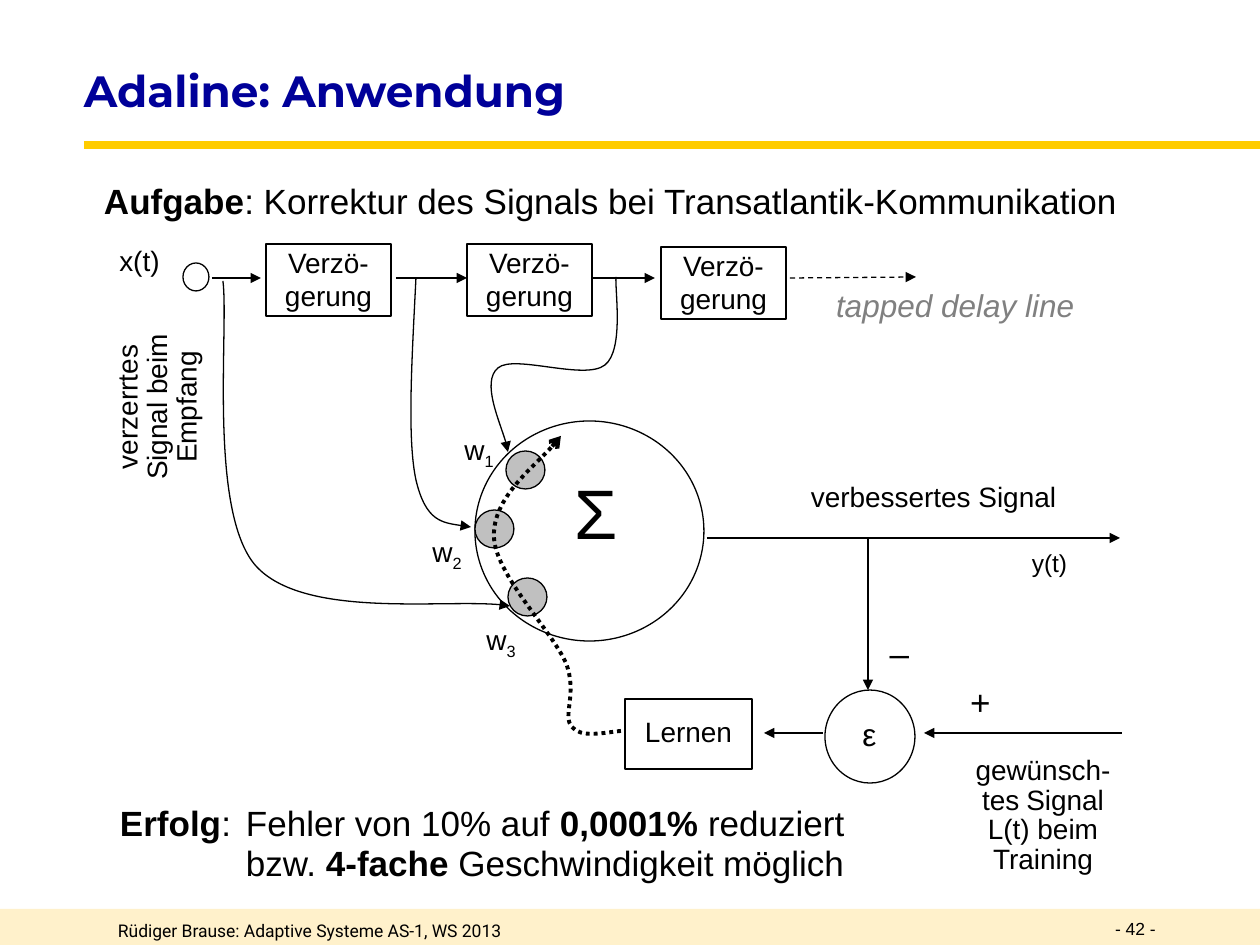
from dataclasses import dataclass

from lxml.etree import SubElement
from pptx import Presentation
from pptx.dml.color import RGBColor
from pptx.enum.dml import MSO_LINE_DASH_STYLE as Dash
from pptx.enum.shapes import MSO_CONNECTOR as Connector, MSO_SHAPE as Shape
from pptx.enum.text import MSO_ANCHOR as Anchor, PP_ALIGN as Align
from pptx.oxml.ns import qn
from pptx.util import Emu, Pt

EMU_PER_PX = 914400 / 126


def px(length):
    return Emu(round(length * EMU_PER_PX))


@dataclass(frozen=True)
class Theme:
    black: str = "000000"
    white: str = "FFFFFF"
    grey: str = "808080"
    synapse: str = "C0C0C0"
    navy: str = "000099"
    gold: str = "FFCC00"
    cream: str = "FFE499"
    body_font: str = "Arial"
    title_font: str = "Montserrat"
    footer_font: str = "Roboto"
    footer: int = 10
    small: int = 14
    label: int = 16
    symbol: int = 18
    body: int = 20
    title: int = 25
    sigma: int = 40
    thin: float = 0.75
    dotted: float = 2.25
    rule: float = 4.5


class SlideBuilder:
    def __init__(self, slide, theme):
        self.slide = slide
        self.theme = theme

    def style_line(self, line, color=None, width=None, dash=None, arrow=None):
        line.color.rgb = RGBColor.from_string(color or self.theme.black)
        line.width = Pt(width or self.theme.thin)
        if dash:
            line.dash_style = dash
        if arrow:
            SubElement(line._get_or_add_ln(), qn("a:tailEnd"), type=arrow)

    def shape(self, kind, box, fill=None, outline=True, alpha=None):
        shape = self.slide.shapes.add_shape(kind, *map(px, box))
        shape.shadow.inherit = False
        shape.fill.solid()
        shape.fill.fore_color.rgb = RGBColor.from_string(fill or self.theme.white)
        if alpha:
            color = shape._element.spPr.find(".//" + qn("a:srgbClr"))
            SubElement(color, qn("a:alpha"), val=str(alpha * 1000))
        if outline:
            self.style_line(shape.line)
        else:
            shape.line.fill.background()
        return shape

    def line(self, start, end, **style):
        line = self.slide.shapes.add_connector(
            Connector.STRAIGHT, *map(px, (*start, *end)))
        SubElement(line._element.spPr, qn("a:effectLst"))
        self.style_line(line.line, **style)

    def curve(self, start, *points, **style):
        """Draw cubic Bézier pieces, three points to each piece."""
        builder = self.slide.shapes.build_freeform(*start, scale=EMU_PER_PX)
        builder.add_line_segments(points, close=False)
        shape = builder.convert_to_shape()
        shape.shadow.inherit = False
        shape.fill.background()
        segments = shape._element.xpath(".//a:lnTo")
        for first, second, third in zip(*[iter(segments)] * 3):
            first.tag = qn("a:cubicBezTo")
            for segment in (second, third):
                first.append(segment[0])
                segment.getparent().remove(segment)
        self.style_line(shape.line, **style)

    def fill_text(self, shape, paragraphs, size, font=None, color=None, align=Align.LEFT,
                  spacing=1.0, insets=(13, 6, 13, 6), anchor=Anchor.TOP, wrap=True, tab=None):
        frame = shape.text_frame
        sides = ("margin_left", "margin_top", "margin_right", "margin_bottom")
        settings = dict(zip(sides, map(px, insets)), word_wrap=wrap, vertical_anchor=anchor)
        for name, value in settings.items():
            setattr(frame, name, value)
        for index, runs in enumerate(paragraphs):
            paragraph = frame.add_paragraph() if index else frame.paragraphs[0]
            paragraph.alignment = align
            paragraph.line_spacing = spacing
            if tab:
                tabs = SubElement(paragraph._p.get_or_add_pPr(), qn("a:tabLst"))
                SubElement(tabs, qn("a:tab"), pos=str(px(tab)), algn="l")
            for text, extra in runs:
                run = paragraph.add_run()
                run.text = text
                values = {"name": font or self.theme.body_font, "size": Pt(size), **extra}
                baseline = values.pop("baseline", None)
                for name, value in values.items():
                    setattr(run.font, name, value)
                run.font.color.rgb = RGBColor.from_string(color or self.theme.black)
                if baseline:
                    run.font._element.set("baseline", str(baseline))

    def text(self, box, *paragraphs, **style):
        self.fill_text(self.slide.shapes.add_textbox(*map(px, box)), paragraphs, **style)

    def label(self, box, *runs, size=None, outline=False, spacing=0.88, top=4, vert=None):
        shape = self.shape(Shape.RECTANGLE, box, outline=outline)
        self.fill_text(shape, [runs], size or self.theme.label, align=Align.CENTER,
                       spacing=spacing, insets=(3, top, 3, 0))
        if vert:
            shape.text_frame._txBody.bodyPr.set("vert", vert)


def main():
    theme = Theme()
    presentation = Presentation()
    presentation.slide_width, presentation.slide_height = px(1260), px(945)
    slide = presentation.slides.add_slide(presentation.slide_layouts[6])
    build = SlideBuilder(slide, theme)
    bold, arrow = {"bold": True}, "triangle"

    # Footer, title and rule
    build.shape(Shape.RECTANGLE, (0, 909, 1260, 36), theme.cream, outline=False, alpha=50)
    build.line((84, 145), (1260, 145), color=theme.gold, width=theme.rule)
    build.text((105, 914, 683, 32), [("Rüdiger Brause: Adaptive Systeme AS-1, WS 2013", {})],
               size=theme.footer, font=theme.footer_font)
    build.text((1102, 912, 95, 33), [("- 42 -", {})], size=theme.footer)
    build.text((84, 55, 912, 69), [("Adaline: Anwendung", bold)], size=theme.title,
               font=theme.title_font, color=theme.navy, insets=(0, 6, 13, 6),
               anchor=Anchor.MIDDLE, wrap=False)

    # Weight labels
    for index, left, top in ((3, 467, 620), (2, 413, 532), (1, 445, 430)):
        build.label((left, top, 68, 49), ("w", {}), (str(index), {"baseline": -25000}))

    # Delay line
    build.shape(Shape.OVAL, (183, 263, 26, 28))
    for left, top in ((266, 244), (661, 247), (467, 244)):
        build.label((left, top, 125, 72), ("Verzö-gerung", {}), outline=True, spacing=0.98, top=3)
    for start, end in ((212, 261), (396, 467), (593, 655)):
        build.line((start, 278), (end, 278), arrow=arrow)
    build.line((790, 278), (916, 277), dash=Dash.DASH, arrow=arrow)

    # Neuron with its synapses and output
    build.shape(Shape.OVAL, (475, 421, 229, 220))
    for left, top in ((506, 451), (475, 510), (508, 578)):
        build.shape(Shape.OVAL, (left, top, 39, 38), theme.synapse)
    build.line((707, 538), (1120, 538), arrow=arrow)
    build.label((786, 480, 295, 44), ("verbessertes Signal", {}))

    # Taps from the delay line to the synapses
    build.curve((223, 281), (229, 329), (208, 512), (256, 566),
                (304, 619), (457, 597), (510, 606), arrow=arrow)
    build.curve((416, 278), (412, 359), (407, 438), (416, 480),
                (426, 522), (449, 524), (471, 527), arrow=arrow)
    build.curve((616, 277), (615, 291), (624, 350), (605, 365),
                (585, 381), (514, 354), (498, 368),
                (481, 382), (507, 438), (508, 452), arrow=arrow)

    build.label((111, 300, 98, 210), ("verzerrtes Signal beim Empfang", {}), vert="vert270")
    sigma = build.shape(Shape.RECTANGLE, (572, 461, 76, 125), outline=False)
    build.fill_text(sigma, [[("Σ", {})]], theme.sigma, insets=(3, 9, 3, 0))

    # Learning loop
    build.label((625, 699, 127, 70), ("Lernen", {}), outline=True, spacing=1.38, top=3)
    build.line((1122, 733), (924, 733), arrow=arrow)
    build.label((963, 753, 160, 81), ("gewünsch-tes", {}), (" ", {"size": Pt(theme.small)}),
                ("Signal L(t) beim Training", {}))
    build.label((1018, 548, 63, 44), ("y(t)", {}), size=theme.small)
    build.label((108, 244, 63, 44), ("x(t)", {}))
    build.shape(Shape.OVAL, (825, 690, 90, 93))
    build.line((823, 733), (764, 733), arrow=arrow)
    build.curve((621, 731), (602, 733), (581, 738), (572, 727),
                (562, 716), (578, 694), (566, 663),
                (552, 631), (494, 573), (494, 536),
                (493, 498), (547, 456), (561, 436),
                width=theme.dotted, dash=Dash.ROUND_DOT, arrow="arrow")
    build.label((838, 716, 63, 44), ("ε", {}), size=theme.symbol)
    build.line((868, 539), (868, 690), arrow=arrow)
    build.label((872, 633, 55, 37), ("–", {}), size=theme.body)
    build.label((953, 682, 55, 43), ("+", {}), size=theme.body)

    # Task, result and caption
    build.text((91, 173, 1140, 54), [("Aufgabe", bold),
               (": Korrektur des Signals bei Transatlantik-Kommunikation", {})], size=theme.body)
    build.text((107, 799, 785, 92),
               [("Erfolg", bold), (": \tFehler von 10% auf ", {}), ("0,0001%", bold),
                (" reduziert", {})],
               [("\tbzw. ", {}), ("4-fache", bold), (" Geschwindigkeit möglich", {})],
               size=theme.body, spacing=0.95, tab=126)
    build.text((823, 280, 357, 50), [("tapped delay line", {"italic": True})],
               size=theme.symbol, color=theme.grey)

    presentation.save("out.pptx")


if __name__ == "__main__":
    main()
